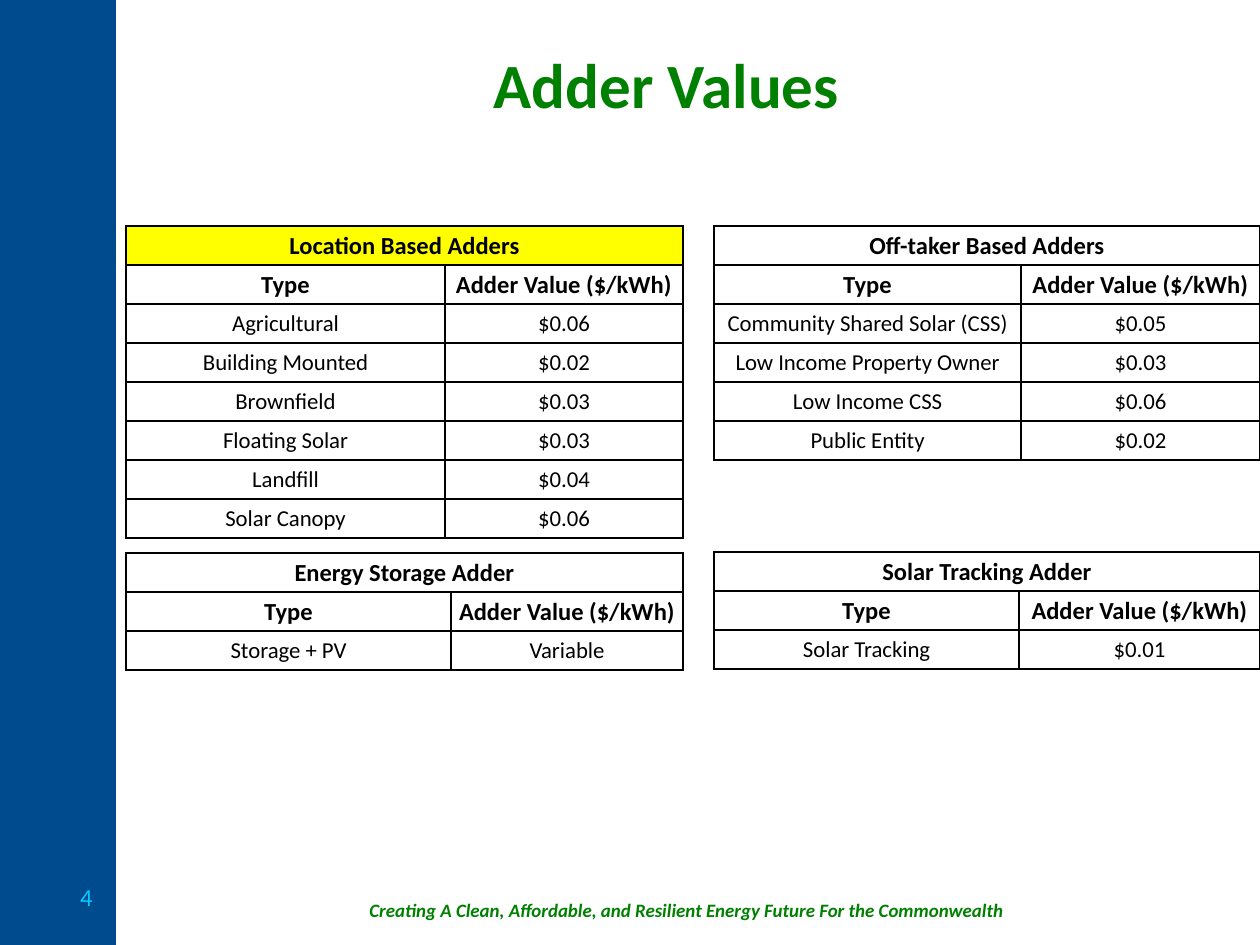
from dataclasses import dataclass

from lxml.etree import SubElement
from pptx import Presentation
from pptx.dml.color import RGBColor as Rgb
from pptx.enum.shapes import MSO_SHAPE as Shape
from pptx.enum.text import MSO_ANCHOR as Anchor, PP_ALIGN as Align
from pptx.oxml import parse_xml
from pptx.oxml.ns import nsdecls
from pptx.util import Emu, Pt


@dataclass(frozen=True)
class Theme:
    font: str = "Calibri"
    blue: str = "004B8E"
    green: str = "008000"
    cyan: str = "00CCFF"
    black: str = "000000"
    white: str = "FFFFFF"
    yellow: str = "FFFF00"
    title: float = 36
    footer: float = 10.8
    number: float = 14
    heading: float = 14
    body: float = 13


theme = Theme()


def px(length):
    return Emu(round(length * 914400 / 126))


def write(frame, text, size, color, align, bold=False, italic=False):
    para = frame.paragraphs[0]
    para.text = text
    para.alignment = align
    font = para.font
    font.name, font.size = theme.font, Pt(size)
    font.bold, font.italic = bold, italic
    font.color.rgb = Rgb.from_string(color)


deck = Presentation()
deck.slide_width, deck.slide_height = px(1260), px(945)
page = deck.slides.add_slide(deck.slide_layouts[6])

sidebar = page.shapes.add_shape(Shape.RECTANGLE, 0, 0, px(116), px(945))
sidebar.shadow.inherit = False
sidebar.fill.solid()
sidebar.fill.fore_color.rgb = Rgb.from_string(theme.blue)
sidebar.line.fill.background()

footer = "Creating A Clean, Affordable, and Resilient Energy Future For the Commonwealth"
labels = [
    (footer, (357, 892, 703, 53), theme.footer, theme.green, Align.LEFT, Anchor.TOP, True, True),
    ("Adder Values", (136, 31, 1061, 105), theme.title, theme.green, Align.CENTER, Anchor.MIDDLE, True, False),
    ("4", (21, 872, 84, 50), theme.number, theme.cyan, Align.RIGHT, Anchor.MIDDLE, False, False),
]
for text, place, size, color, align, anchor, bold, italic in labels:
    frame = page.shapes.add_textbox(*map(px, place)).text_frame
    frame.word_wrap = True
    frame.vertical_anchor = anchor
    write(frame, text, size, color, align, bold, italic)

row_height = 39
column_header = ("Type", "Adder Value ($/kWh)")
adder_tables = [
    ("Energy Storage Adder", theme.white, 126, 553, (325, 232), [
        ("Storage + PV", "Variable"),
    ]),
    ("Location Based Adders", theme.yellow, 126, 226, (319, 238), [
        ("Agricultural", "$0.06"),
        ("Building Mounted", "$0.02"),
        ("Brownfield", "$0.03"),
        ("Floating Solar", "$0.03"),
        ("Landfill", "$0.04"),
        ("Solar Canopy", "$0.06"),
    ]),
    ("Off-taker Based Adders", theme.white, 714, 226, (307, 239), [
        ("Community Shared Solar (CSS)", "$0.05"),
        ("Low Income Property Owner", "$0.03"),
        ("Low Income CSS", "$0.06"),
        ("Public Entity", "$0.02"),
    ]),
    ("Solar Tracking Adder", theme.white, 714, 552, (305, 241), [
        ("Solar Tracking", "$0.01"),
    ]),
]
for heading, heading_fill, left, top, widths, adders in adder_tables:
    rows = [(heading, ""), column_header, *adders]
    table = page.shapes.add_table(
        len(rows), 2, px(left), px(top), px(sum(widths)), px(row_height * len(rows))
    ).table
    table.first_row = table.horz_banding = False
    for column, width in zip(table.columns, widths):
        column.width = px(width)
    for row_index, row in enumerate(rows):
        table.rows[row_index].height = px(row_height)
        is_header = row_index < 2
        for column_index, text in enumerate(row):
            cell = table.cell(row_index, column_index)
            cell.margin_left = cell.margin_right = cell.margin_top = px(1)
            cell.margin_bottom = 0
            cell.vertical_anchor = Anchor.MIDDLE
            size = theme.heading if is_header else theme.body
            write(cell.text_frame, text, size, theme.black, Align.CENTER, is_header)
            cell.fill.solid()
            cell.fill.fore_color.rgb = Rgb.from_string(heading_fill if row_index == 0 else theme.white)
            properties = cell._tc.get_or_add_tcPr()
            for position, side in enumerate(("lnL", "lnR", "lnT", "lnB")):
                border = parse_xml(f'<a:{side} {nsdecls("a")} w="{Pt(1)}"><a:solidFill/></a:{side}>')
                SubElement(border[0], border[0].tag.replace("solidFill", "srgbClr"), val=theme.black)
                properties.insert(position, border)
    table.cell(0, 0).merge(table.cell(0, 1))

deck.save("out.pptx")
